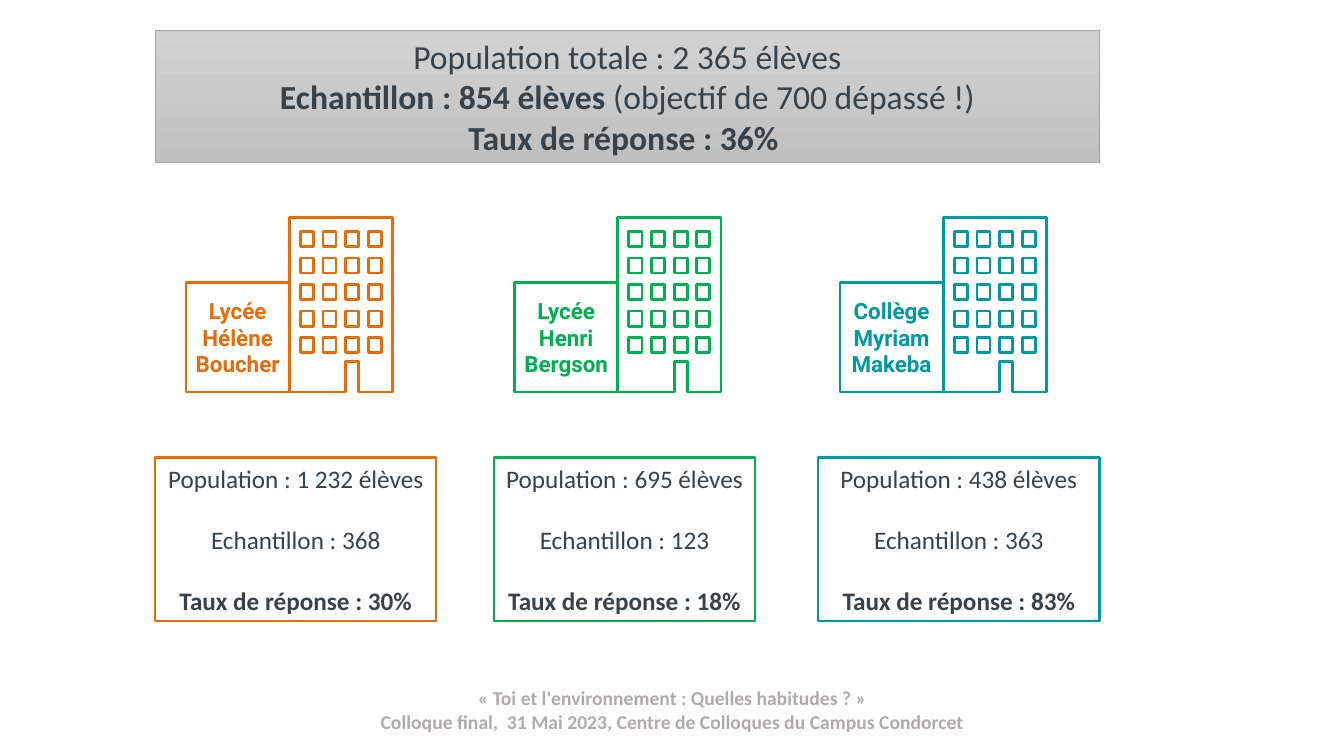
import dataclasses
import typing

import pptx
import pptx.dml.color
import pptx.enum.shapes
import pptx.enum.text
import pptx.util

Cm = pptx.util.Cm
Pt = pptx.util.Pt

HUES = {
    "orange": "E46C0A",
    "green": "00B050",
    "teal": "0098A1",
    "ink": "37424A",
    "white": "FFFFFF",
    "edge": "A5A5A5",
    "foot": "AFABAB",
    "light": "D2D2D2",
    "dark": "C0C0C0",
}
WIDE, HIGH = 2.6, 4.39
ROOF, WING = 5.49, 7.11


@dataclasses.dataclass(frozen=True)
class Run:
    text: str
    bold: bool = False


@dataclasses.dataclass(frozen=True)
class Font:
    name: str
    size: float
    hue: str


@dataclasses.dataclass(frozen=True)
class School:
    kind: str
    name: str
    hue: str
    tower: float
    left: float
    width: float
    total: str
    sample: str
    rate: str


SCHOOLS = [
    School("Lycée", "Hélène Boucher", "orange", 7.29, 3.91, 7.09, "1 232", "368", "30%"),
    School("Lycée", "Henri Bergson", "green", 15.57, 12.45, 6.58, "695", "123", "18%"),
    School("Collège", "Myriam Makeba", "teal", 23.77, 20.62, 7.09, "438", "363", "83%"),
]


def tint(key: str) -> pptx.dml.color.RGBColor:
    return pptx.dml.color.RGBColor.from_string(HUES[key])


def write(frame: typing.Any, rows: list[list[Run]], font: Font, gap: float = 0) -> None:
    frame.word_wrap = True
    frame.auto_size = pptx.enum.text.MSO_AUTO_SIZE.NONE
    for i, row in enumerate(rows):
        para = frame.paragraphs[0] if i == 0 else frame.add_paragraph()
        para.alignment = pptx.enum.text.PP_ALIGN.CENTER
        para.space_before = Pt(gap if i else 0)
        for item in row:
            run = para.add_run()
            run.text = item.text
            run.font.name = font.name
            run.font.size = Pt(font.size)
            run.font.bold = item.bold
            run.font.color.rgb = tint(font.hue)


def style(shape: typing.Any, hue: str, width: float, fill: bool) -> None:
    shape.shadow.inherit = False
    if fill:
        shape.fill.solid()
        shape.fill.fore_color.rgb = tint("white")
    else:
        shape.fill.background()
    shape.line.color.rgb = tint(hue)
    shape.line.width = Pt(width)


def box(shapes: typing.Any, left: float, top: float, width: float, height: float) -> typing.Any:
    shape = shapes.add_shape(
        pptx.enum.shapes.MSO_SHAPE.RECTANGLE, Cm(left), Cm(top), Cm(width), Cm(height)
    )
    shape.text_frame.vertical_anchor = pptx.enum.text.MSO_ANCHOR.MIDDLE
    return shape


def tower(shapes: typing.Any, left: float, hue: str) -> None:
    def spot(x: float, y: float) -> tuple[int, int]:
        return Cm(left + x), Cm(ROOF + y)

    wall = [(0, HIGH), (1.42, HIGH), (1.42, 3.63), (1.75, 3.63), (1.75, HIGH), (WIDE, HIGH), (WIDE, 0)]
    pen = shapes.build_freeform(*spot(0, 0), scale=1.0)
    pen.add_line_segments([spot(x, y) for x, y in wall], close=True)
    for row in range(5):
        for col in range(4):
            x, y = 0.28 + 0.57 * col, 0.34 + 0.67 * row
            pen.move_to(*spot(x, y))
            pane = [(x + 0.33, y), (x + 0.33, y + 0.38), (x, y + 0.38)]
            pen.add_line_segments([spot(a, b) for a, b in pane], close=True)
    style(pen.convert_to_shape(), hue, 2, True)


def draw(slide: typing.Any, school: School) -> None:
    group = slide.shapes.add_group_shape().shapes
    tower(group, school.tower, school.hue)
    wing = box(group, school.tower - WIDE, WING, WIDE, ROOF + HIGH - WING)
    style(wing, school.hue, 2, True)
    frame = wing.text_frame
    frame.margin_left = frame.margin_right = Cm(0.13)
    names = [[Run(school.kind, True)], [Run(school.name, True)]]
    write(frame, names, Font("Roboto", 16, school.hue))

    card = box(slide.shapes, school.left, 11.53, school.width, 4.11)
    style(card, school.hue, 1.5, False)
    facts = [
        [Run(f"Population : {school.total} élèves")],
        [Run(f"Echantillon : {school.sample}")],
        [Run(f"Taux de réponse : {school.rate}", True)],
    ]
    write(card.text_frame, facts, Font("Calibri", 18, "ink"), 22)


def head(title: typing.Any) -> None:
    title.left, title.top = Cm(3.91), Cm(0.76)
    title.width, title.height = Cm(23.8), Cm(3.33)
    title.fill.gradient()
    title.fill.gradient_angle = 270
    for stop, key, place in zip(title.fill.gradient_stops, ("light", "dark"), (0, 1)):
        stop.color.rgb = tint(key)
        stop.position = place
    title.line.color.rgb = tint("edge")
    title.line.width = Pt(0.5)
    title.text_frame.vertical_anchor = pptx.enum.text.MSO_ANCHOR.MIDDLE
    rows = [
        [Run("Population totale : 2 365 élèves")],
        [Run("Echantillon : 854 élèves ", True), Run("(objectif de 700 dépassé !)")],
        [Run("Taux de réponse : 36% ", True)],
    ]
    write(title.text_frame, rows, Font("Calibri", 24, "ink"))


def foot(slide: typing.Any) -> None:
    note = slide.shapes.add_textbox(Cm(2.34), Cm(17.17), Cm(29.21), Cm(1.5))
    rows = [
        [Run("« Toi et l'environnement : Quelles habitudes ? »", True)],
        [Run("Colloque final,  31 Mai 2023, Centre de Colloques du Campus Condorcet", True)],
    ]
    write(note.text_frame, rows, Font("Calibri", 14, "foot"))


def main() -> None:
    deck = pptx.Presentation()
    deck.slide_width, deck.slide_height = Cm(33.87), Cm(19.05)
    slide = deck.slides.add_slide(deck.slide_layouts[5])
    head(slide.shapes.title)
    for school in SCHOOLS:
        draw(slide, school)
    foot(slide)
    deck.save("out.pptx")


if __name__ == "__main__":
    main()
